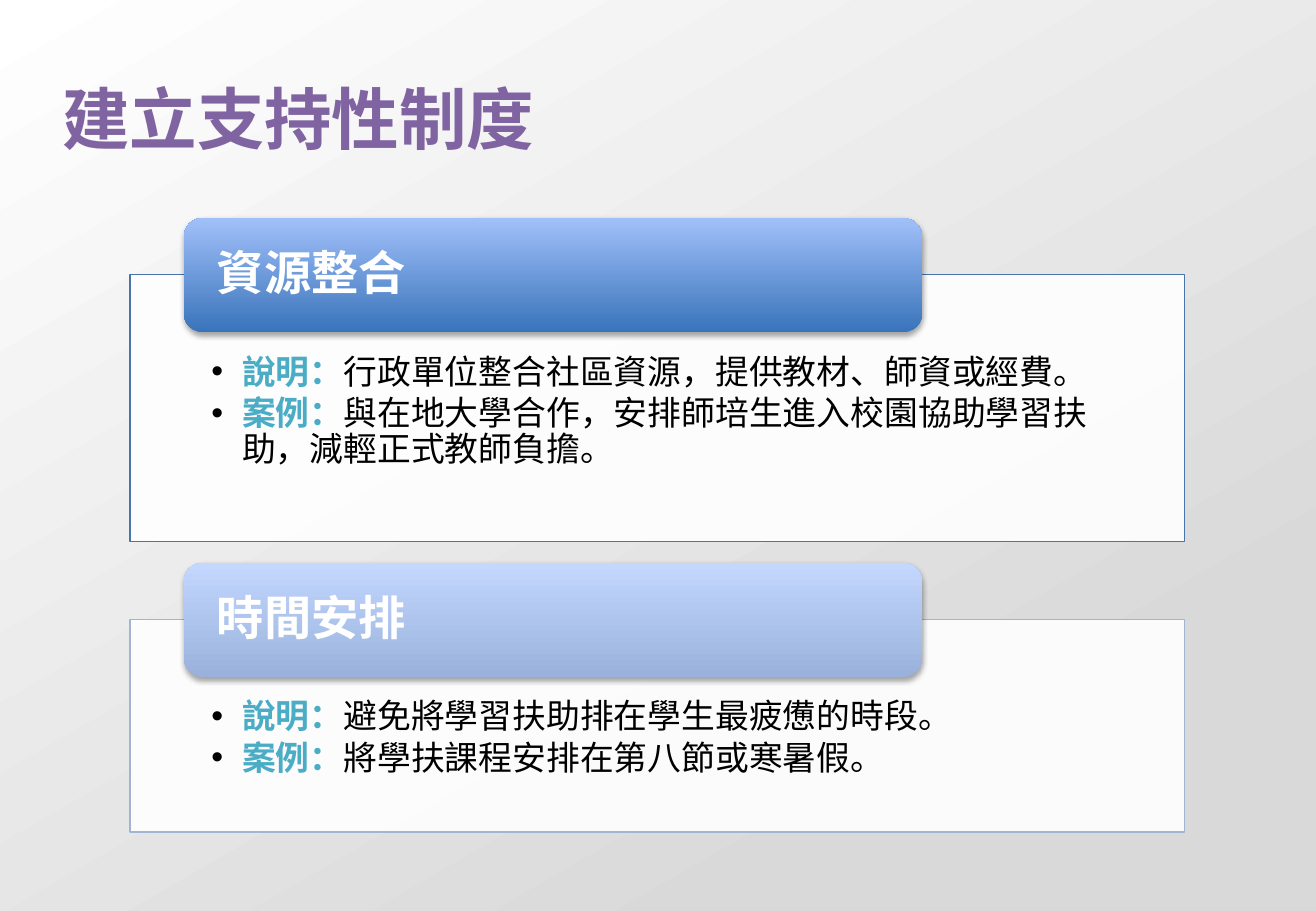
"""Build the slide on setting up supportive systems."""
import pptx
import pptx.dml.color
import pptx.enum.shapes
import pptx.enum.text
import pptx.oxml.ns
import pptx.util
from lxml import etree

Cm, Pt = pptx.util.Cm, pptx.util.Pt
ANCHOR = pptx.enum.text.MSO_ANCHOR
ALIGN = pptx.enum.text.PP_ALIGN
FONT = "Noto Sans CJK SC"
HUES = {
    "white": "FFFFFF", "grey": "D9D9D9", "black": "000000",
    "title": "8064A2", "label": "4BACC6",
}
CARDS = [
    {
        "head": "資源整合", "top": 5.74, "high": 5.59,
        "line": "4875AC", "low": "3974BA", "peak": "A1C0FA",
        "list": [
            ("說明：", "行政單位整合社區資源，提供教材、師資或經費。"),
            ("案例：", "與在地大學合作，安排師培生進入校園協助學習扶助，減輕正式教師負擔。"),
        ],
    },
    {
        "head": "時間安排", "top": 12.95, "high": 4.45,
        "line": "A2B4D4", "low": "9AB2DB", "peak": "C3D7FF",
        "list": [
            ("說明：", "避免將學習扶助排在學生最疲憊的時段。"),
            ("案例：", "將學扶課程安排在第八節或寒暑假。"),
        ],
    },
]
RGB = pptx.dml.color.RGBColor.from_string


def add(node, tag, **attrs):
    return etree.SubElement(node, pptx.oxml.ns.qn(tag), attrs)


def write(para, text, size, hue, bold):
    run = para.add_run()
    run.text = text
    for key, val in {"name": FONT, "size": Pt(size), "bold": bold}.items():
        setattr(run.font, key, val)
    run.font.color.rgb = RGB(HUES[hue])
    add(run.font._element, "a:ea", typeface=FONT)


deck = pptx.Presentation()
deck.slide_width, deck.slide_height = Cm(27.51), Cm(19.05)
slide = deck.slides.add_slide(deck.slide_layouts[3])
title, *panels = slide.placeholders

heads = [slide.shapes.add_shape(
    pptx.enum.shapes.MSO_SHAPE.ROUNDED_RECTANGLE,
    Cm(3.84), Cm(card["top"] - 1.18), Cm(15.44), Cm(2.39)) for card in CARDS]

boxes = [(title, (1.3, 1.6, 26.19, 1.7), (0, 0, 0, 0), ANCHOR.MIDDLE)]
for card, panel, head in zip(CARDS, panels, heads):
    spot = (2.72, card["top"], 22.05, card["high"])
    boxes.append((panel, spot, (1.7, 1.68, 1.7, 0.41), ANCHOR.TOP))
    boxes.append((head, None, (0.58, 0, 0.58, 0), ANCHOR.MIDDLE))
for shape, spot, pads, anchor in boxes:
    if spot:
        for key, val in zip(("left", "top", "width", "height"), spot):
            setattr(shape, key, Cm(val))
    for side, pad in zip(("left", "top", "right", "bottom"), pads):
        setattr(shape.text_frame, "margin_" + side, Cm(pad))
    form = {"word_wrap": True, "vertical_anchor": anchor,
            "auto_size": pptx.enum.text.MSO_AUTO_SIZE.NONE}
    for key, val in form.items():
        setattr(shape.text_frame, key, val)

fades = [(slide.background.fill, HUES["white"], HUES["grey"], 0.8, 300)]
fades += [(head.fill, card["low"], card["peak"], 1, 90)
          for card, head in zip(CARDS, heads)]
for fill, start, end, stop, angle in fades:
    fill.gradient()
    fill.gradient_angle = angle
    for mark, hue, place in zip(fill.gradient_stops, (start, end), (0, stop)):
        mark.color.rgb = RGB(hue)
        mark.position = place

line = title.text_frame.paragraphs[0]
line.alignment = ALIGN.LEFT
write(line, "建立支持性制度", 40, "title", True)

for card, panel, head in zip(CARDS, panels, heads):
    panel.fill.solid()
    panel.fill.fore_color.rgb = RGB(HUES["white"])
    tint = panel._element.spPr.xpath("a:solidFill/a:srgbClr")[0]
    add(tint, "a:alpha", val="90000")
    panel.line.color.rgb = RGB(card["line"])
    panel.line.width = Pt(0.75)

    frame = panel.text_frame
    for row, (label, text) in enumerate(card["list"]):
        para = frame.add_paragraph() if row else frame.paragraphs[0]
        props = para._p.get_or_add_pPr()
        props.set("marL", str(Cm(0.64)))
        props.set("indent", str(-Cm(0.64)))
        add(add(props, "a:buClr"), "a:srgbClr", val=HUES["black"])
        add(props, "a:buFont", typeface="Arial")
        add(props, "a:buChar", char="•")
        form = {"line_spacing": 0.9, "space_before": Pt(0),
                "space_after": Pt(3), "alignment": ALIGN.LEFT}
        for key, val in form.items():
            setattr(para, key, val)
        write(para, label, 20, "label", True)
        write(para, text, 20, "black", False)

    head.line.fill.background()
    head.shadow.inherit = False
    glow = add(head._element.spPr.xpath("a:effectLst")[0], "a:outerShdw",
               blurRad=str(Pt(3.1)), dist=str(Pt(1.8)), dir="5400000",
               rotWithShape="0")
    shade = add(glow, "a:srgbClr", val=HUES["black"])
    add(shade, "a:alpha", val="35000")
    para = head.text_frame.paragraphs[0]
    para.alignment = ALIGN.LEFT
    para.line_spacing = 0.9
    write(para, card["head"], 28, "white", True)

deck.save("out.pptx")
